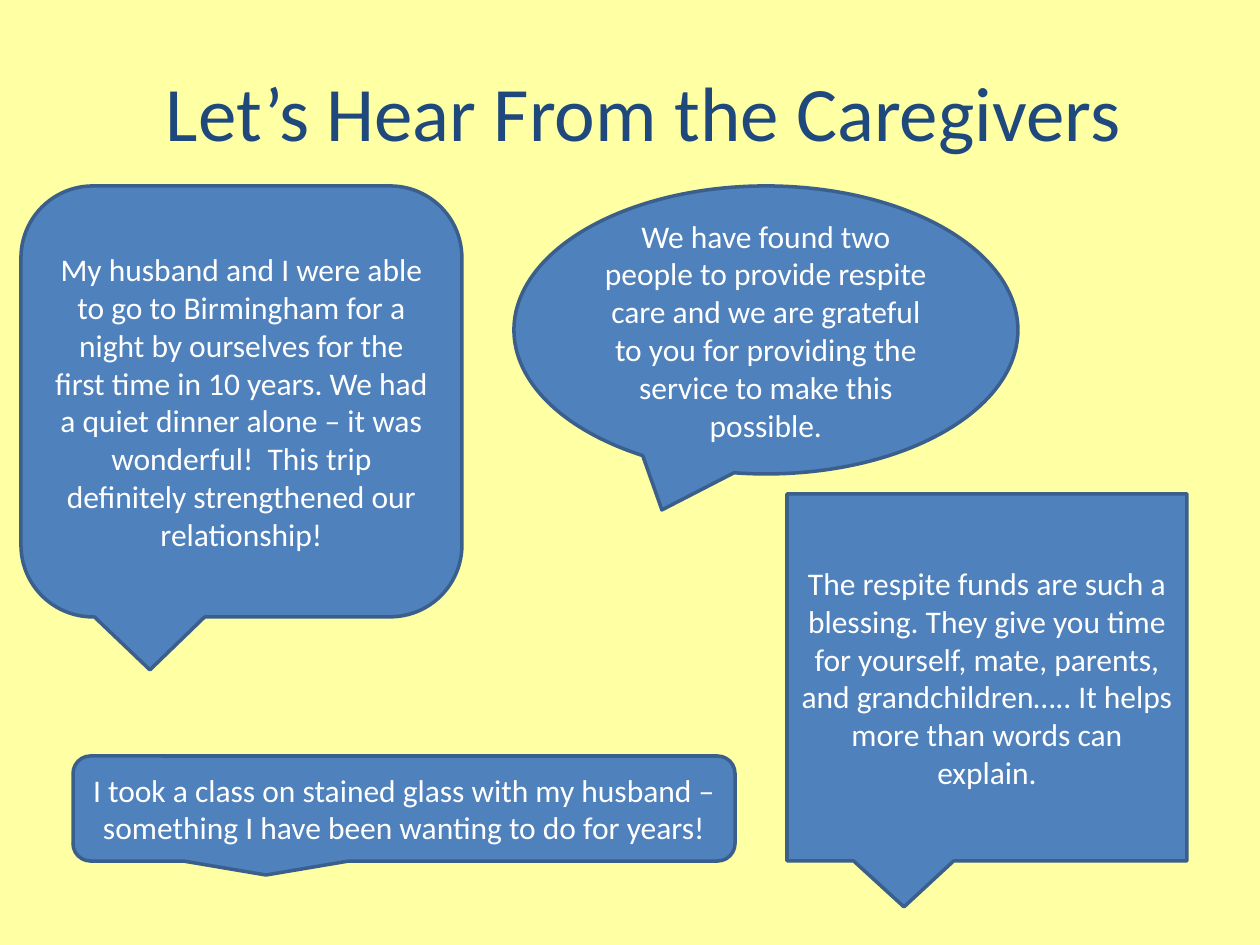
from pptx import Presentation
from pptx.dml.color import RGBColor
from pptx.enum.shapes import MSO_SHAPE
from pptx.enum.text import MSO_ANCHOR, MSO_AUTO_SIZE, PP_ALIGN
from pptx.util import Pt

PX = 914400 // 126
COLORS = {"background": "FFFFA3", "title": "1F497D", "bubble": "4F81BD",
          "outline": "3A5F8C", "quote": "FFFFFF"}

TITLE = "Let’s Hear From the Caregivers "
TITLE_BOX = (122, 53, 1061, 116)

QUOTES = [
    {"outline": MSO_SHAPE.ROUNDED_RECTANGULAR_CALLOUT,
     "box": (21, 186, 441, 431), "tip": (150, 670),
     "text": "My husband and I were able to go to Birmingham for a night by "
             "ourselves for the first time in 10 years. We had a quiet dinner "
             "alone – it was wonderful!  This trip definitely strengthened "
             "our relationship!"},
    {"outline": MSO_SHAPE.RECTANGULAR_CALLOUT,
     "box": (787, 494, 400, 367), "tip": (904, 907),
     "text": "The respite funds are such a blessing. They give you time for "
             "yourself, mate, parents, and grandchildren….. It helps more "
             "than words can explain."},
    {"outline": MSO_SHAPE.OVAL_CALLOUT,
     "box": (514, 186, 504, 288), "tip": (662, 510),
     "text": "We have found two people to provide respite care and we are "
             "grateful to you for providing the service to make this possible."},
    {"outline": MSO_SHAPE.ROUNDED_RECTANGULAR_CALLOUT,
     "box": (73, 756, 662, 105), "tip": (266, 875),
     "text": "I took a class on stained glass with my husband – something "
             "I have been wanting to do for years!"},
]

FRAME_FORMAT = {"word_wrap": True, "auto_size": MSO_AUTO_SIZE.NONE,
                "vertical_anchor": MSO_ANCHOR.MIDDLE}


def color(role):
    return RGBColor.from_string(COLORS[role])


def write(holder, text, size, role):
    frame = holder.text_frame
    for name, value in FRAME_FORMAT.items():
        setattr(frame, name, value)
    paragraph = frame.paragraphs[0]
    paragraph.alignment = PP_ALIGN.CENTER
    run = paragraph.add_run()
    run.text = text
    for name, value in {"name": "Calibri", "size": Pt(size)}.items():
        setattr(run.font, name, value)
    run.font.color.rgb = color(role)


def add_bubble(slide, quote):
    left, top, width, height = quote["box"]
    tip_x, tip_y = quote["tip"]
    bubble = slide.shapes.add_shape(quote["outline"], *(n * PX for n in quote["box"]))
    bubble.adjustments[0] = (tip_x - left) / width - 0.5
    bubble.adjustments[1] = (tip_y - top) / height - 0.5
    bubble.shadow.inherit = False
    bubble.fill.solid()
    bubble.fill.fore_color.rgb = color("bubble")
    bubble.line.color.rgb = color("outline")
    bubble.line.width = Pt(2)
    write(bubble, quote["text"], 18, "quote")


def main():
    deck = Presentation()
    deck.slide_width, deck.slide_height = 1260 * PX, 945 * PX
    slide = deck.slides.add_slide(deck.slide_layouts[5])
    slide.background.fill.solid()
    slide.background.fill.fore_color.rgb = color("background")

    title = slide.shapes.title
    for side, length in zip(("left", "top", "width", "height"), TITLE_BOX):
        setattr(title, side, length * PX)
    write(title, TITLE, 44, "title")

    for quote in QUOTES:
        add_bubble(slide, quote)
    deck.save("out.pptx")


if __name__ == "__main__":
    main()
